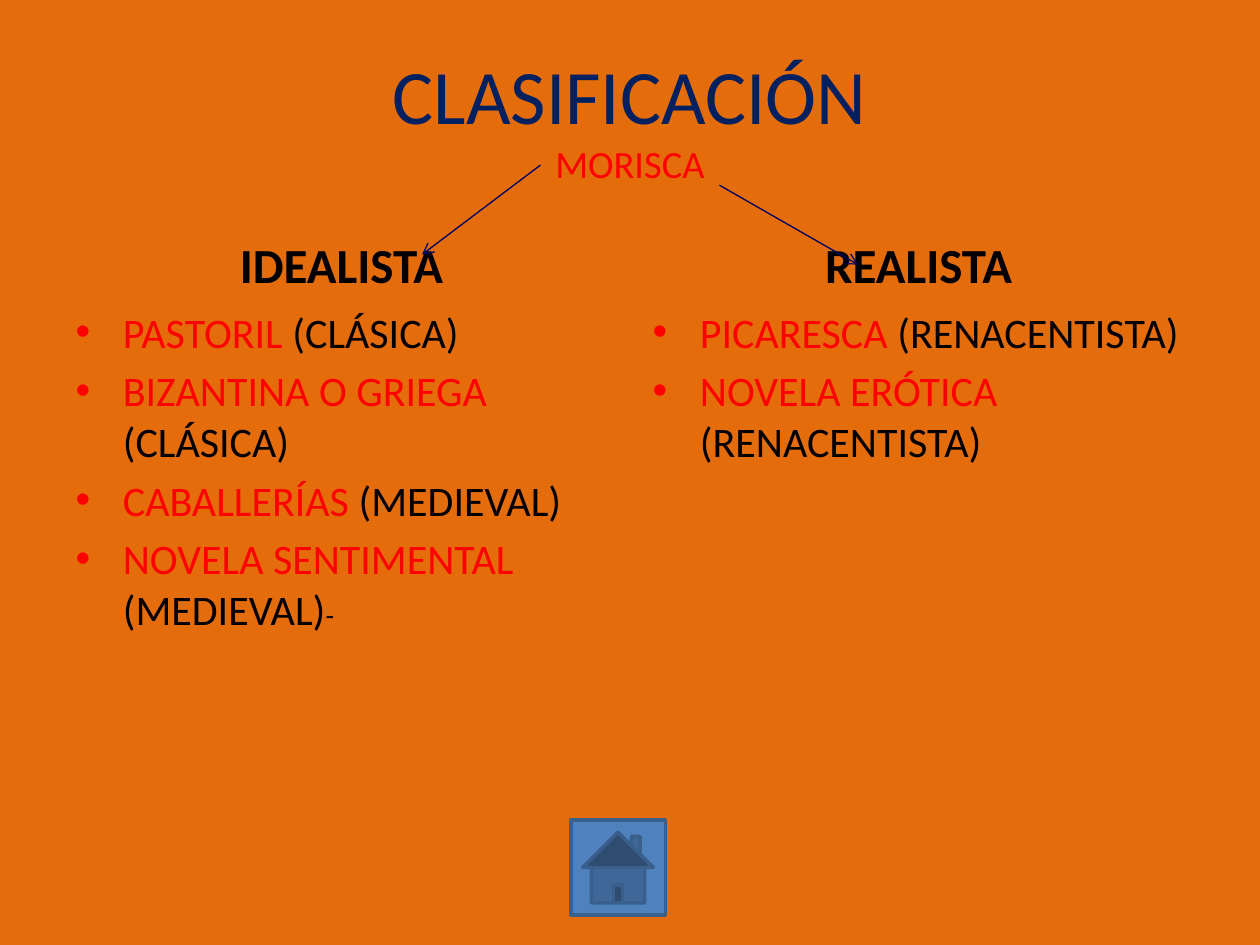
from dataclasses import dataclass

from lxml.etree import SubElement
from pptx import Presentation
from pptx.dml.color import RGBColor
from pptx.enum.shapes import MSO_CONNECTOR, MSO_SHAPE
from pptx.enum.text import MSO_ANCHOR, PP_ALIGN
from pptx.oxml.ns import qn
from pptx.util import Inches, Pt


@dataclass(frozen=True)
class Theme:
    """Colours, font and type sizes of the slide."""
    font: str = "Calibri"
    background: str = "E46C0A"
    title: str = "002060"
    genre: str = "FF0000"
    text: str = "000000"
    arrow: str = "000066"
    button: str = "4F81BD"
    button_line: str = "3A5F8C"
    title_size: int = 44
    subtitle_size: int = 22
    heading_size: int = 28
    list_size: int = 24
    dash_size: int = 16


THEME = Theme()
WIDTH, HEIGHT = 10, 7.5
MARGIN, COLUMN_WIDTH = 0.5, 4.42
COLUMN_LEFTS = (MARGIN, WIDTH - MARGIN - COLUMN_WIDTH)
TITLE_TOP, TITLE_HEIGHT = 0.3, 1.25
HEADING_TOP, HEADING_HEIGHT = 1.68, 0.7
LIST_TOP, LIST_HEIGHT = HEADING_TOP + HEADING_HEIGHT, 4.32

COLUMNS = (
    ("IDEALISTA", (
        ("PASTORIL", " (CLÁSICA)"),
        ("BIZANTINA O GRIEGA", " (CLÁSICA)"),
        ("CABALLERÍAS", " (MEDIEVAL)"),
        ("NOVELA SENTIMENTAL ", "(MEDIEVAL)", "-"),
    )),
    ("REALISTA", (
        ("PICARESCA", " (RENACENTISTA)"),
        ("NOVELA ERÓTICA ", "(RENACENTISTA)"),
    )),
)
ARROWS = (((5.71, 1.47), (6.81, 2.1)), ((4.29, 1.31), (3.35, 2.02)))


def add_text(paragraph, text, *, size, color, bold=False):
    """Append a formatted run to a paragraph."""
    run = paragraph.add_run()
    run.text = text
    run.font.name = THEME.font
    run.font.size = Pt(size)
    run.font.bold = bold
    run.font.color.rgb = RGBColor.from_string(color)


def place(shape, left, top, width, height, anchor):
    """Move a placeholder and return its text frame."""
    shape.left, shape.top = Inches(left), Inches(top)
    shape.width, shape.height = Inches(width), Inches(height)
    shape.text_frame.vertical_anchor = anchor
    return shape.text_frame


def fill_title(shape):
    """Write the title and the genre below it."""
    frame = place(shape, MARGIN, TITLE_TOP, WIDTH - 2 * MARGIN, TITLE_HEIGHT, MSO_ANCHOR.MIDDLE)
    paragraph = frame.paragraphs[0]
    paragraph.alignment = PP_ALIGN.CENTER
    add_text(paragraph, "CLASIFICACIÓN", size=THEME.title_size, color=THEME.title)
    paragraph.add_line_break()
    add_text(paragraph, "MORISCA", size=THEME.subtitle_size, color=THEME.genre)


def fill_heading(shape, left, text):
    """Write a column heading."""
    frame = place(shape, left, HEADING_TOP, COLUMN_WIDTH, HEADING_HEIGHT, MSO_ANCHOR.BOTTOM)
    paragraph = frame.paragraphs[0]
    paragraph.alignment = PP_ALIGN.CENTER
    add_text(paragraph, text, size=THEME.heading_size, color=THEME.text, bold=True)


def fill_list(shape, left, items):
    """Write a bulleted list of genres with their origins."""
    frame = place(shape, left, LIST_TOP, COLUMN_WIDTH, LIST_HEIGHT, MSO_ANCHOR.TOP)
    for index, (genre, origin, *dashes) in enumerate(items):
        paragraph = frame.add_paragraph() if index else frame.paragraphs[0]
        add_text(paragraph, genre, size=THEME.list_size, color=THEME.genre)
        add_text(paragraph, origin, size=THEME.list_size, color=THEME.text)
        for dash in dashes:
            add_text(paragraph, dash, size=THEME.dash_size, color=THEME.text)


def add_arrow(slide, start, end):
    """Draw a thin line with an open arrowhead at its end."""
    points = [Inches(value) for value in (*start, *end)]
    arrow = slide.shapes.add_connector(MSO_CONNECTOR.STRAIGHT, *points)
    arrow.line.color.rgb = RGBColor.from_string(THEME.arrow)
    arrow.line.width = Pt(0.75)
    SubElement(arrow.line._get_or_add_ln(), qn("a:tailEnd"), type="arrow")
    SubElement(arrow._element.spPr, qn("a:effectLst"))


def add_home_button(slide, left, top, side):
    """Draw the square home button."""
    button = slide.shapes.add_shape(
        MSO_SHAPE.ACTION_BUTTON_HOME, Inches(left), Inches(top), Inches(side), Inches(side))
    button.shadow.inherit = False
    button.fill.solid()
    button.fill.fore_color.rgb = RGBColor.from_string(THEME.button)
    button.line.color.rgb = RGBColor.from_string(THEME.button_line)
    button.line.width = Pt(2)


def main():
    """Build and save the slide."""
    presentation = Presentation()
    presentation.slide_width, presentation.slide_height = Inches(WIDTH), Inches(HEIGHT)
    slide = presentation.slides.add_slide(presentation.slide_layouts.get_by_name("Comparison"))
    slide.background.fill.solid()
    slide.background.fill.fore_color.rgb = RGBColor.from_string(THEME.background)

    title, *bodies = slide.placeholders
    fill_title(title)
    for left, heading, body, (name, items) in zip(COLUMN_LEFTS, bodies[::2], bodies[1::2], COLUMNS):
        fill_heading(heading, left, name)
        fill_list(body, left, items)
    for start, end in ARROWS:
        add_arrow(slide, start, end)
    add_home_button(slide, 4.53, 6.51, 0.75)
    presentation.save("out.pptx")


if __name__ == "__main__":
    main()
